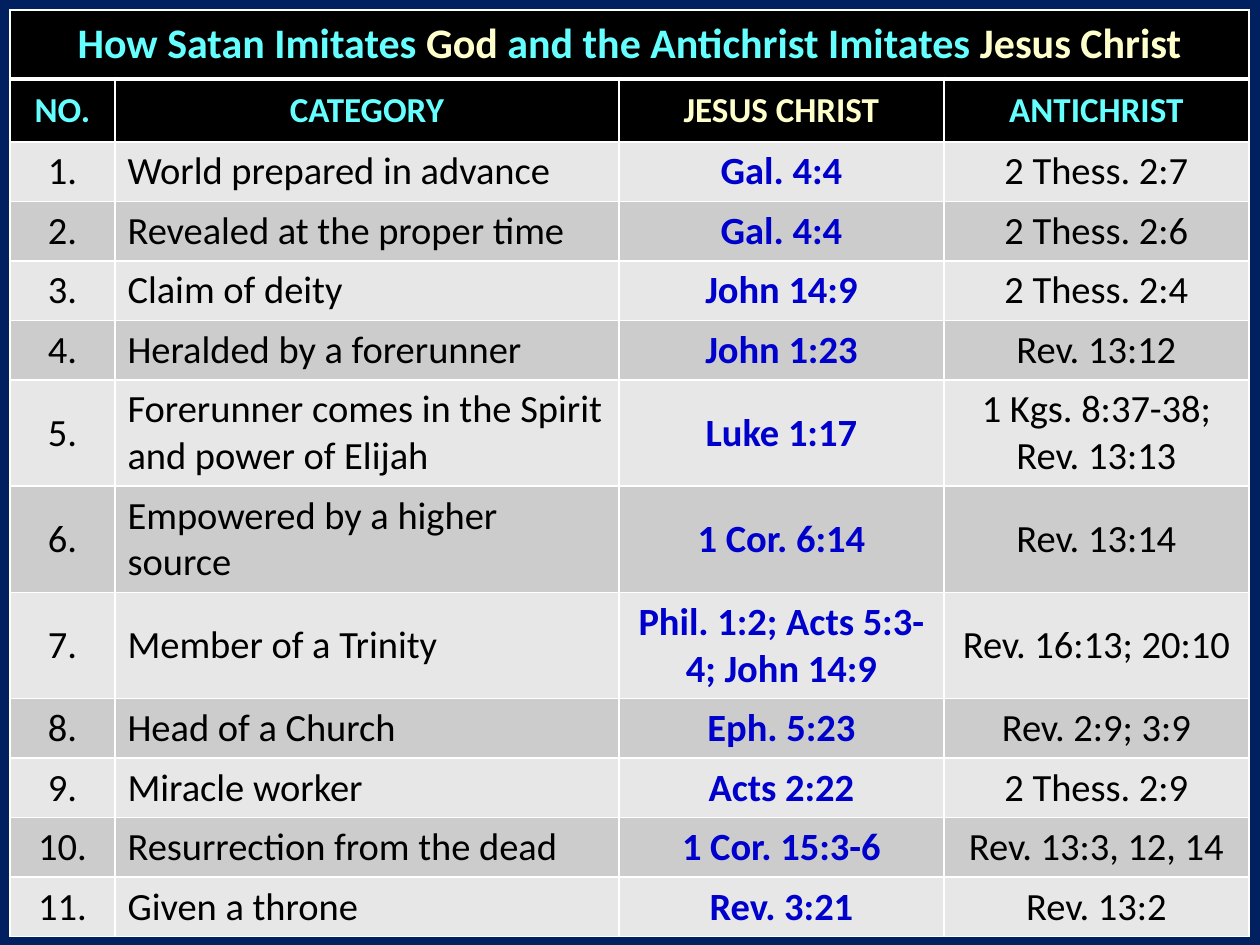
from lxml.etree import SubElement
from pptx import Presentation
from pptx.dml.color import RGBColor
from pptx.enum.text import MSO_ANCHOR, PP_ALIGN
from pptx.oxml.ns import qn
from pptx.util import Emu, Pt

PX = 914400 // 126
NAVY = RGBColor(0x00, 0x20, 0x60)
BLACK = RGBColor(0x00, 0x00, 0x00)
WHITE = RGBColor(0xFF, 0xFF, 0xFF)
CYAN = RGBColor(0x66, 0xFF, 0xFF)
CREAM = RGBColor(0xFF, 0xFF, 0xCC)
BLUE = RGBColor(0x00, 0x00, 0xCC)
LIGHT = RGBColor(0xE7, 0xE7, 0xE7)
GRAY = RGBColor(0xCC, 0xCC, 0xCC)

TABLE_BOX = (10, 10, 1239, 927)
COLUMN_WIDTHS = [105, 504, 325, 305]
TITLE_HEIGHT, HEADER_HEIGHT = 69, 63
LINE_HEIGHT, TWO_LINE_HEIGHT = 59, 106
TWO_LINE_ROWS = {5, 6, 7}

TITLE = [
    ("How Satan Imitates ", CYAN),
    ("God", CREAM),
    (" and the Antichrist Imitates ", CYAN),
    ("Jesus Christ", CREAM),
]
HEADERS = [("NO.", CYAN), ("CATEGORY", CYAN), ("JESUS CHRIST", CREAM), ("ANTICHRIST", CYAN)]
COMPARISONS = [
    ("World prepared in advance", "Gal. 4:4", "2 Thess. 2:7"),
    ("Revealed at the proper time", "Gal. 4:4", "2 Thess. 2:6"),
    ("Claim of deity", "John 14:9", "2 Thess. 2:4"),
    ("Heralded by a forerunner", "John 1:23", "Rev. 13:12"),
    ("Forerunner comes in the Spirit and power of Elijah", "Luke 1:17", "1 Kgs. 8:37-38; Rev. 13:13"),
    ("Empowered by a higher source", "1 Cor. 6:14", "Rev. 13:14"),
    ("Member of a Trinity", "Phil. 1:2; Acts 5:3-4; John 14:9", "Rev. 16:13; 20:10"),
    ("Head of a Church", "Eph. 5:23", "Rev. 2:9; 3:9"),
    ("Miracle worker", "Acts 2:22", "2 Thess. 2:9"),
    ("Resurrection from the dead", "1 Cor. 15:3-6", "Rev. 13:3, 12, 14"),
    ("Given a throne", "Rev. 3:21", "Rev. 13:2"),
]


def set_borders(cell, top=1, bottom=1):
    """Draw white borders around a cell, with widths in points."""
    properties = cell._tc.get_or_add_tcPr()
    for side, width in (("L", 1), ("R", 1), ("T", top), ("B", bottom)):
        line = SubElement(properties, qn(f"a:ln{side}"), w=str(Pt(width)))
        fill = SubElement(line, qn("a:solidFill"))
        SubElement(fill, qn("a:srgbClr"), val=str(WHITE))


def fill_cell(cell, runs, size, fill, bold=False, align=PP_ALIGN.CENTER):
    """Write coloured runs into a cell and format it."""
    cell.fill.solid()
    cell.fill.fore_color.rgb = fill
    cell.vertical_anchor = MSO_ANCHOR.MIDDLE
    paragraph = cell.text_frame.paragraphs[0]
    paragraph.alignment = align
    paragraph.font.name = "Calibri"
    paragraph.font.size = Pt(size)
    paragraph.font.bold = bold
    for text, color in runs:
        run = paragraph.add_run()
        run.text = text
        run.font.color.rgb = color
        run.font.bold = bold


def add_comparison_table(slide, box):
    """Place the title, header and comparison rows as one table in the box."""
    left, top, width, height = (Emu(value * PX) for value in box)
    row_count = len(COMPARISONS) + 2
    table = slide.shapes.add_table(row_count, len(HEADERS), left, top, width, height).table
    for column, column_width in zip(table.columns, COLUMN_WIDTHS):
        column.width = Emu(column_width * PX)
    row_heights = [TITLE_HEIGHT, HEADER_HEIGHT] + [
        TWO_LINE_HEIGHT if number in TWO_LINE_ROWS else LINE_HEIGHT
        for number in range(1, len(COMPARISONS) + 1)
    ]
    for index, (row, row_height) in enumerate(zip(table.rows, row_heights)):
        row.height = Emu(row_height * PX)
        for cell in row.cells:
            set_borders(cell, top=3 if index == 1 else 1, bottom=3 if index == 0 else 1)

    table.cell(0, 0).merge(table.cell(0, len(HEADERS) - 1))
    fill_cell(table.cell(0, 0), TITLE, 24, BLACK, bold=True)
    for column, header in enumerate(HEADERS):
        fill_cell(table.cell(1, column), [header], 20, BLACK, bold=True)
    for number, comparison in enumerate(COMPARISONS, start=1):
        fill = LIGHT if number % 2 else GRAY
        for column, text in enumerate((f"{number}.", *comparison)):
            is_christ = column == 2
            fill_cell(
                table.cell(number + 1, column),
                [(text, BLUE if is_christ else BLACK)],
                22,
                fill,
                bold=is_christ,
                align=PP_ALIGN.LEFT if column == 1 else PP_ALIGN.CENTER,
            )


def main():
    """Build and save the presentation."""
    presentation = Presentation()
    presentation.slide_width = Emu(1260 * PX)
    presentation.slide_height = Emu(945 * PX)
    slide = presentation.slides.add_slide(presentation.slide_layouts[6])
    slide.background.fill.solid()
    slide.background.fill.fore_color.rgb = NAVY
    add_comparison_table(slide, TABLE_BOX)
    presentation.save("out.pptx")


if __name__ == "__main__":
    main()
